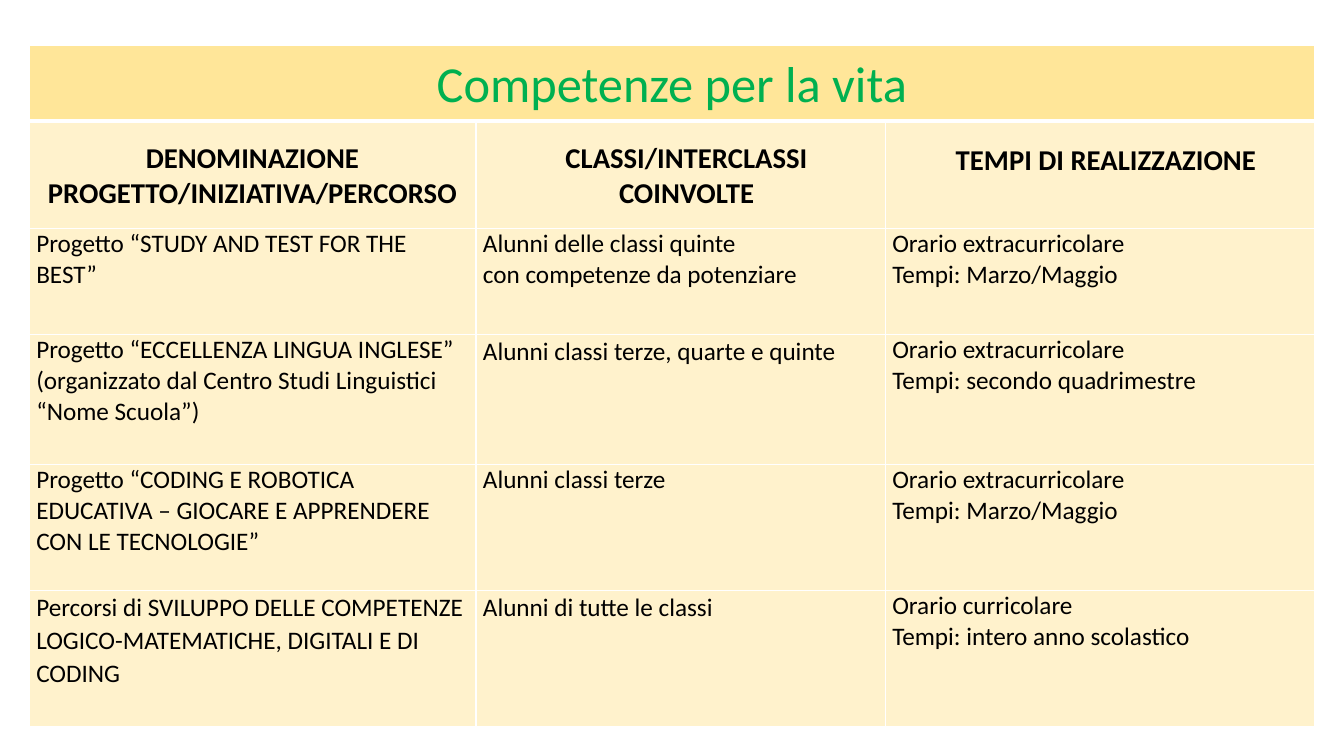
from lxml import etree
from pptx import Presentation
from pptx.dml.color import RGBColor
from pptx.enum.text import PP_ALIGN
from pptx.oxml.ns import qn
from pptx.util import Inches, Pt

CENTER, LEFT = PP_ALIGN.CENTER, PP_ALIGN.LEFT
COLUMNS = [4.43, 4.06, 4.26]
HEIGHTS = [0.75, 1.07, 1.05, 1.29, 1.25, 1.35]
ROWS = [
    ["Competenze per la vita", "", ""],
    ["DENOMINAZIONE\nPROGETTO/INIZIATIVA/PERCORSO",
     "CLASSI/INTERCLASSI COINVOLTE",
     "TEMPI DI REALIZZAZIONE"],
    ["Progetto “STUDY AND TEST FOR THE BEST”",
     "Alunni delle classi quinte\ncon competenze da potenziare",
     "Orario extracurricolare\nTempi: Marzo/Maggio"],
    ["Progetto “ECCELLENZA LINGUA INGLESE” (organizzato dal Centro Studi Linguistici “Nome Scuola”)",
     "Alunni classi terze, quarte e quinte",
     "Orario extracurricolare\nTempi: secondo quadrimestre"],
    ["Progetto “CODING E ROBOTICA EDUCATIVA – GIOCARE E APPRENDERE CON LE TECNOLOGIE”",
     "Alunni classi terze",
     "Orario extracurricolare\nTempi: Marzo/Maggio"],
    ["Percorsi di SVILUPPO DELLE COMPETENZE LOGICO-MATEMATICHE, DIGITALI E DI CODING",
     "Alunni di tutte le classi",
     "Orario curricolare\nTempi: intero anno scolastico"],
]
LOOSE = {(0, 0), (1, 2), (3, 1), (5, 0), (5, 1)}  # cells with 1.07 line spacing

TITLE = {"size": 36, "bold": False, "color": "00B050", "fill": "FFE699",
         "align": CENTER, "top": 0.05, "bottom_line": 3}
HEADER = {"size": 20.5, "bold": True, "color": "000000", "fill": "FFF2CC",
          "align": CENTER, "top": 0.2, "bottom_line": 1}
BODY = {**HEADER, "size": 18, "bold": False, "align": LEFT, "top": 0}
STYLES = [TITLE, HEADER] + [BODY] * 4


def rgb(color):
    return RGBColor.from_string(color)


def add_borders(cell, bottom_width):
    """Give the cell white edges; call before setting its fill."""
    tcPr = cell._tc.get_or_add_tcPr()
    for edge, width in zip("LRTB", (1, 1, 1, bottom_width)):
        ln = etree.SubElement(tcPr, qn(f"a:ln{edge}"), w=str(Pt(width)))
        fill = etree.SubElement(ln, qn("a:solidFill"))
        etree.SubElement(fill, qn("a:srgbClr"), val="FFFFFF")


prs = Presentation()
prs.slide_width, prs.slide_height = Inches(13.33), Inches(7.5)
s = prs.slides.add_slide(prs.slide_layouts[6])

table = s.shapes.add_table(
    len(ROWS), len(COLUMNS), Inches(0.29), Inches(0.45),
    Inches(sum(COLUMNS)), Inches(sum(HEIGHTS))).table
table.first_row = table.horz_banding = False
for column, width in zip(table.columns, COLUMNS):
    column.width = Inches(width)
for row, height in zip(table.rows, HEIGHTS):
    row.height = Inches(height)
table.cell(0, 0).merge(table.cell(0, 2))

for i, (texts, style) in enumerate(zip(ROWS, STYLES)):
    for j, text in enumerate(texts):
        cell = table.cell(i, j)
        add_borders(cell, style["bottom_line"])
        cell.fill.solid()
        cell.fill.fore_color.rgb = rgb(style["fill"])
        indent = 0.12 if style is HEADER and j else 0
        cell.margin_left = Inches(0.07 + indent)
        cell.margin_right = Inches(0.07)
        cell.margin_top = Inches(style["top"])
        cell.margin_bottom = 0
        cell.text = text
        for p in cell.text_frame.paragraphs:
            p.alignment = style["align"]
            p.line_spacing = 1.07 if (i, j) in LOOSE else 1.0
            font = p.font
            font.name = "Calibri"
            font.size = Pt(style["size"])
            font.bold = style["bold"]
            font.color.rgb = rgb(style["color"])

prs.save("out.pptx")
